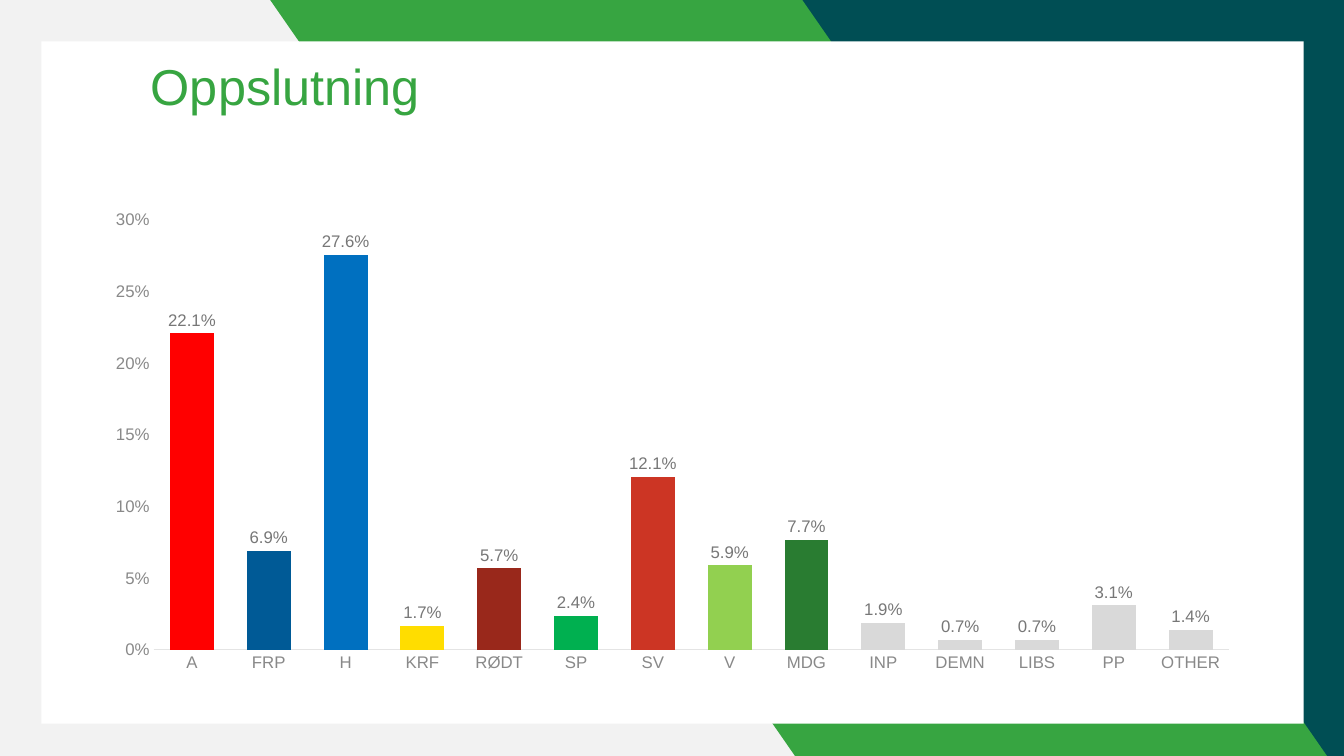
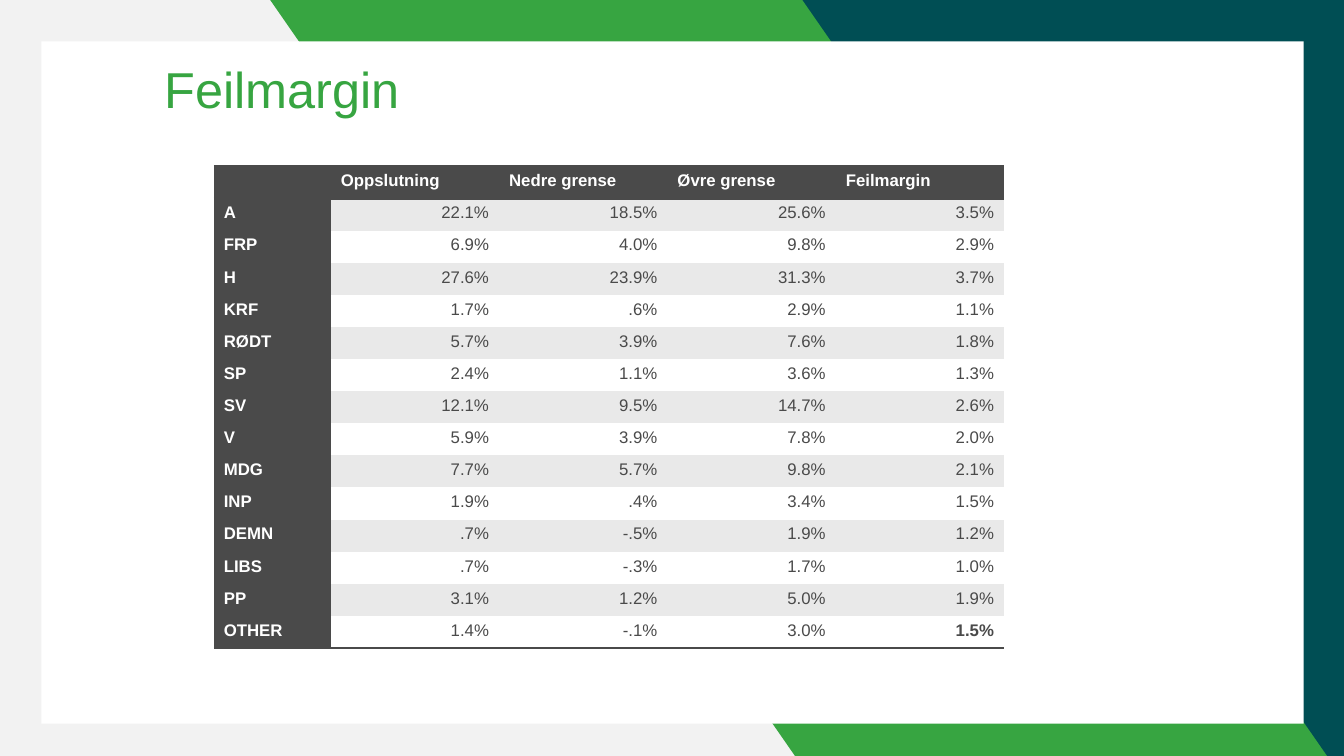
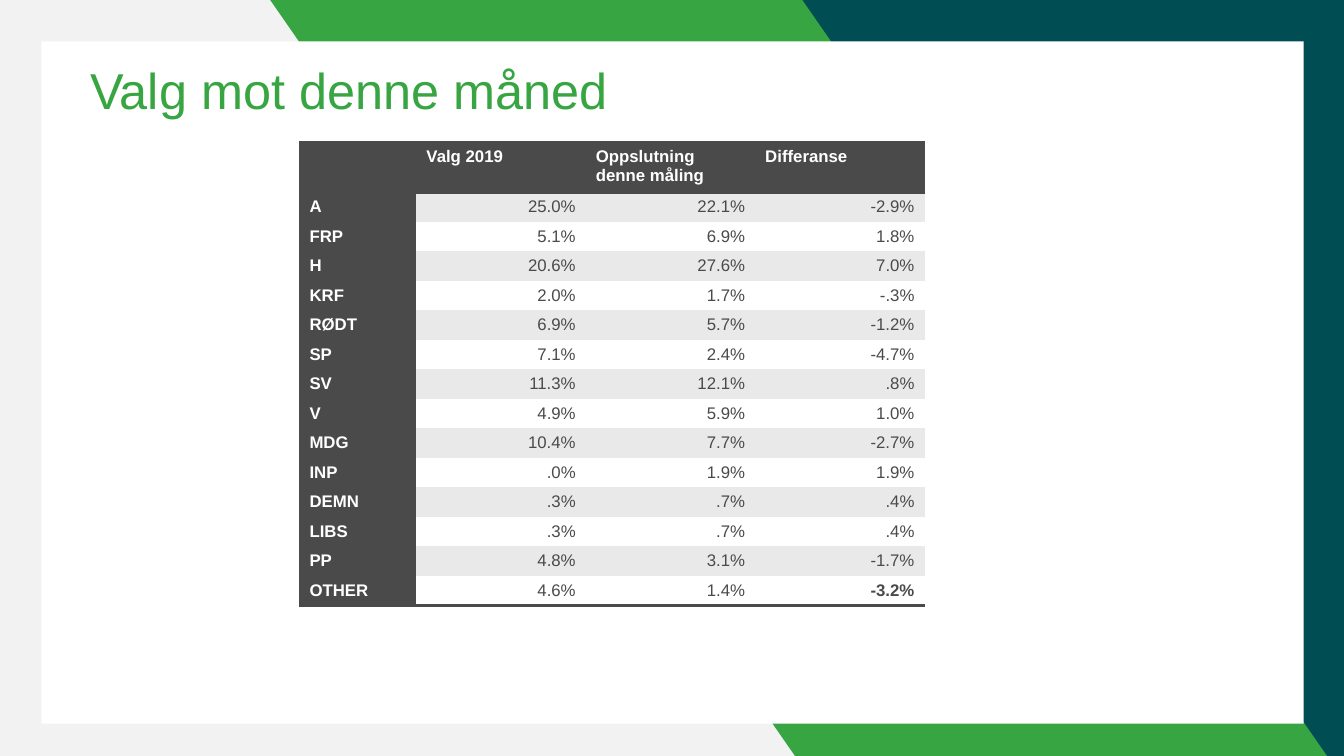
from dataclasses import dataclass

from lxml.etree import SubElement
from pptx import Presentation
from pptx.chart.data import CategoryChartData
from pptx.dml.color import RGBColor
from pptx.enum.chart import XL_CHART_TYPE as Chart, XL_LABEL_POSITION as Spot, XL_TICK_MARK as Tick
from pptx.enum.shapes import MSO_SHAPE as Kind
from pptx.enum.text import MSO_ANCHOR as Anchor, PP_ALIGN as Align
from pptx.oxml.ns import qn
from pptx.util import Inches, Pt


@dataclass(frozen=True)
class Theme:
    font: str = "Arial"
    green: str = "37A541"
    teal: str = "004E54"
    pale: str = "F2F2F2"
    white: str = "FFFFFF"
    dark: str = "4A4A4A"
    band: str = "E9E9E9"
    axis: str = "898989"
    rule: str = "E4E4E4"
    label: str = "777777"
    title: int = 36
    body: int = 12


THEME = Theme()
PLAIN_TABLE = "{2D5ABB26-0587-4C30-8999-92F81FD0307C}"

GRAY = "D9D9D9"
COLORS = ["FF0000", "005A96", "0070C0", "FFDD00", "99281B", "00B050", "CC3524",
          "92D050", "297C31"] + [GRAY] * 5

# party, share, lower limit, upper limit, margin, 2019 election, difference
PARTIES = [
    ("A", "22.1%", "18.5%", "25.6%", "3.5%", "25.0%", "-2.9%"),
    ("FRP", "6.9%", "4.0%", "9.8%", "2.9%", "5.1%", "1.8%"),
    ("H", "27.6%", "23.9%", "31.3%", "3.7%", "20.6%", "7.0%"),
    ("KRF", "1.7%", ".6%", "2.9%", "1.1%", "2.0%", "-.3%"),
    ("RØDT", "5.7%", "3.9%", "7.6%", "1.8%", "6.9%", "-1.2%"),
    ("SP", "2.4%", "1.1%", "3.6%", "1.3%", "7.1%", "-4.7%"),
    ("SV", "12.1%", "9.5%", "14.7%", "2.6%", "11.3%", ".8%"),
    ("V", "5.9%", "3.9%", "7.8%", "2.0%", "4.9%", "1.0%"),
    ("MDG", "7.7%", "5.7%", "9.8%", "2.1%", "10.4%", "-2.7%"),
    ("INP", "1.9%", ".4%", "3.4%", "1.5%", ".0%", "1.9%"),
    ("DEMN", ".7%", "-.5%", "1.9%", "1.2%", ".3%", ".4%"),
    ("LIBS", ".7%", "-.3%", "1.7%", "1.0%", ".3%", ".4%"),
    ("PP", "3.1%", "1.2%", "5.0%", "1.9%", "4.8%", "-1.7%"),
    ("OTHER", "1.4%", "-.1%", "3.0%", "1.5%", "4.6%", "-3.2%"),
]

MARGIN = {
    "heads": ["", "Oppslutning", "Nedre grense", "Øvre grense", "Feilmargin"],
    "picks": (0, 1, 2, 3, 4),
    "at": (2.12, 1.65), "width": 1.67, "head": 0.32, "height": 4.78,
}
CHANGE = {
    "heads": ["", "Valg 2019", "Oppslutning denne måling", "Differanse"],
    "picks": (0, 5, 1, 6),
    "at": (2.97, 1.41), "width": 1.68, "head": 0.5, "height": 4.6,
}
NAME_WIDTH = 1.16

FRAME = [
    (Kind.RECTANGLE, (0, 0, 13.33, 7.54), THEME.pale),
    (Kind.RECTANGLE, (7.94, 0, 5.4, 7.54), THEME.teal),
    (Kind.PARALLELOGRAM, (2.68, 0, 10.51, 7.54), THEME.green),
    (Kind.RECTANGLE, (0.41, 0.41, 12.52, 6.77), THEME.white),
]


def rgb(code):
    return RGBColor.from_string(code)


def paint(fill, code):
    fill.solid()
    fill.fore_color.rgb = rgb(code)


def style(font, size, color, bold=False):
    font.name, font.size, font.bold = THEME.font, Pt(size), bold
    font.color.rgb = rgb(color)


def frame(slide, layout):
    """Draw the coloured frame and move it into the layout, behind the title."""
    for mark in list(layout.placeholders)[1:]:
        layout.shapes.element.remove(mark.element)
    for i, (kind, box, color) in enumerate(FRAME):
        shape = slide.shapes.add_shape(kind, *map(Inches, box))
        shape.shadow.inherit = False
        paint(shape.fill, color)
        shape.line.fill.background()
        if kind == Kind.PARALLELOGRAM:
            shape.adjustments[0] = 0.694
            shape.element.spPr.xfrm.set("flipH", "1")
        layout.shapes.element.insert(2 + i, shape.element)


def head(slide, text, left, top, width):
    title = slide.shapes.title
    title.left, title.top = Inches(left), Inches(top)
    title.width, title.height = Inches(width), Inches(0.83)
    box = title.text_frame
    box.text = text
    box.word_wrap = True
    box.vertical_anchor = Anchor.BOTTOM
    box.margin_left = box.margin_right = 0
    box.margin_top = box.margin_bottom = Inches(0.04)
    para = box.paragraphs[0]
    para.alignment = Align.CENTER
    para.line_spacing = 0.9
    style(para.font, THEME.title, THEME.green)


def bars(slide):
    data = CategoryChartData(number_format="0.0%")
    data.categories = [row[0] for row in PARTIES]
    data.add_series("Series 1", [round(float(row[1].rstrip("%")) / 100, 3) for row in PARTIES])
    box = map(Inches, (0.92, 2, 11.5, 4.76))
    chart = slide.shapes.add_chart(Chart.COLUMN_CLUSTERED, *box, data).chart
    chart.has_title = chart.has_legend = False
    style(chart.font, THEME.body, THEME.dark)

    plot = chart.plots[0]
    plot.gap_width, plot.overlap = 75, -25
    plot.vary_by_categories = False
    for i, color in enumerate(COLORS):
        paint(plot.series[0].points[i].format.fill, color)
    plot.has_data_labels = True
    labels = plot.data_labels
    labels.show_value = True
    labels.position = Spot.OUTSIDE_END
    labels.number_format, labels.number_format_is_linked = "0.0%", False
    style(labels.font, THEME.body, THEME.label)

    cats, vals = chart.category_axis, chart.value_axis
    for axis in (cats, vals):
        axis.has_major_gridlines = False
        axis.major_tick_mark = axis.minor_tick_mark = Tick.NONE
        style(axis.tick_labels.font, THEME.body, THEME.axis)
    cats.format.line.color.rgb = rgb(THEME.rule)
    cats.format.line.width = Pt(0.75)
    vals.format.line.fill.background()
    vals.minimum_scale, vals.maximum_scale, vals.major_unit = 0, 0.3, 0.05
    vals.tick_labels.number_format = "0%"
    vals.tick_labels.number_format_is_linked = False


def edge(cell, *sides):
    """Rule the given sides (lnT, lnB, in that order) of a cell."""
    props = cell._tc.get_or_add_tcPr()
    for i, side in enumerate(sides):
        line = SubElement(props, qn(f"a:{side}"), w=str(Pt(2)))
        fill = SubElement(line, qn("a:solidFill"))
        SubElement(fill, qn("a:srgbClr"), val=THEME.dark)
        props.insert(i, line)


def grid(slide, heads, picks, at, width, head, height):
    rows = [heads] + [[row[i] for i in picks] for row in PARTIES]
    last = len(rows) - 1, len(heads) - 1
    size = NAME_WIDTH + width * last[1], height
    table = slide.shapes.add_table(len(rows), len(heads), *map(Inches, at + size)).table
    table._tbl.tblPr.find(qn("a:tableStyleId")).text = PLAIN_TABLE
    for c, col in enumerate(table.columns):
        col.width = Inches(width if c else NAME_WIDTH)
    for r, row in enumerate(rows):
        table.rows[r].height = Inches((height - head) / last[0] if r else head)
        for c, text in enumerate(row):
            cell = table.cell(r, c)
            cell.text = text
            label = r == 0 or c == 0
            paint(cell.fill, THEME.dark if label else THEME.band if r % 2 else THEME.white)
            para = cell.text_frame.paragraphs[0]
            para.alignment = Align.LEFT if label else Align.RIGHT
            style(para.font, THEME.body, THEME.white if label else THEME.dark,
                  label or (r, c) == last)
            if not text:
                SubElement(para._p, qn("a:endParaRPr"), sz=str(THEME.body * 100))
            if r == 0:
                edge(cell, "lnT", "lnB")
            elif r == last[0]:
                edge(cell, "lnB")


def main():
    deck = Presentation()
    deck.slide_width, deck.slide_height = Inches(13.33), Inches(7.5)
    layout = deck.slide_layouts[5]
    share, margin, change = [deck.slides.add_slide(layout) for _ in range(3)]
    frame(share, layout)

    head(share, "Oppslutning", 0.47, 0.37, 4.72)
    bars(share)
    head(margin, "Feilmargin", 0.44, 0.4, 4.72)
    grid(margin, **MARGIN)
    head(change, "Valg mot denne måned", 0.35, 0.41, 6.22)
    grid(change, **CHANGE)
    deck.save("out.pptx")


if __name__ == "__main__":
    main()
